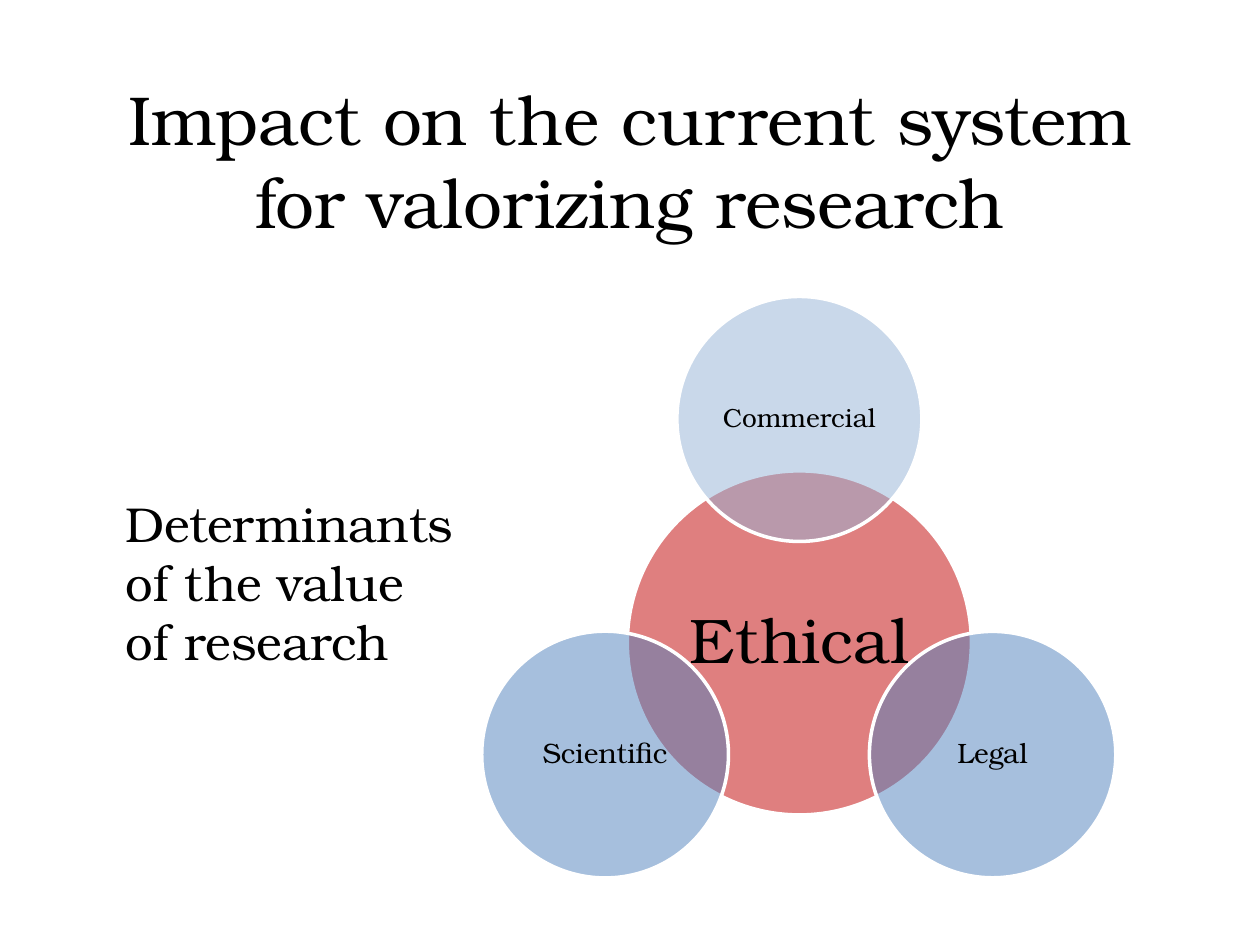
from lxml import etree
from pptx import Presentation
from pptx.dml.color import RGBColor
from pptx.enum.shapes import MSO_SHAPE
from pptx.enum.text import MSO_ANCHOR, PP_ALIGN
from pptx.oxml.ns import qn
from pptx.util import Pt

OVAL = MSO_SHAPE.OVAL
TOP, MIDDLE = MSO_ANCHOR.TOP, MSO_ANCHOR.MIDDLE
LEFT, CENTER = PP_ALIGN.LEFT, PP_ALIGN.CENTER

FONT = "TeX Gyre Bonum"
BLACK = RGBColor(0x00, 0x00, 0x00)
WHITE = RGBColor(0xFF, 0xFF, 0xFF)
RED = RGBColor(0xC0, 0x00, 0x00)
PALE_BLUE = RGBColor(0x95, 0xB3, 0xD7)
BLUE = RGBColor(0x4F, 0x81, 0xBD)

# label, centre x, centre y, diameter (points within the diagram), fill, text size, inset
DETERMINANTS = [
    ("Ethical", 181.8, 198.4, 196.6, RED, 36, 3.6),
    ("Commercial", 181.8, 70.4, 140, PALE_BLUE, 15, 1.44),
    ("Legal", 292.2, 262.2, 140.8, BLUE, 16, 1.44),
    ("Scientific", 70.8, 262.2, 141, BLUE, 16, 1.44),
]


def write_text(frame, text, *, size, align=LEFT, anchor=TOP, spacing=None,
               inset=None, wrap=True):
    frame.word_wrap = wrap
    frame.vertical_anchor = anchor
    if inset is not None:
        frame.margin_left = frame.margin_right = Pt(inset)
        frame.margin_top = frame.margin_bottom = Pt(inset)
    paragraph = frame.paragraphs[0]
    paragraph.alignment = align
    if spacing is not None:
        paragraph.line_spacing = spacing
    run = paragraph.add_run()
    run.text = text
    run.font.name = FONT
    run.font.size = Pt(size)
    run.font.color.rgb = BLACK


def add_text(slide, box, text, **text_format):
    text_box = slide.shapes.add_textbox(*map(Pt, box))
    write_text(text_box.text_frame, text, **text_format)


def make_half_transparent(shape):
    color = shape.fill._xPr.find(qn("a:solidFill"))[0]
    etree.SubElement(color, qn("a:alpha")).set("val", "50000")


def add_circle(slide, box, label, color, size, inset):
    circle = slide.shapes.add_shape(OVAL, *map(Pt, box))
    circle.shadow.inherit = False
    circle.fill.solid()
    circle.fill.fore_color.rgb = color
    make_half_transparent(circle)
    circle.line.color.rgb = WHITE
    circle.line.width = Pt(2)
    write_text(circle.text_frame, label, size=size, align=CENTER,
               anchor=MIDDLE, spacing=0.9, inset=inset, wrap=False)


def add_determinants_diagram(slide, box):
    """Overlapping circles, the central one at the back."""
    left, top = box[:2]
    for label, x, y, diameter, color, size, inset in DETERMINANTS:
        circle_box = (left + x - diameter / 2, top + y - diameter / 2,
                      diameter, diameter)
        add_circle(slide, circle_box, label, color, size, inset)


def main():
    presentation = Presentation()
    presentation.slide_width = Pt(720)
    presentation.slide_height = Pt(540)
    slide = presentation.slides.add_slide(presentation.slide_layouts[6])

    add_text(slide, (36, 21.6, 648, 139),
             "Impact on the current system for valorizing research",
             size=39.6, align=CENTER, anchor=MIDDLE)
    add_determinants_diagram(slide, (275, 169, 363, 333))
    add_text(slide, (64.8, 278.6, 203.8, 108.7),
             "Determinants of the value of research", size=28)

    presentation.save("out.pptx")


if __name__ == "__main__":
    main()
